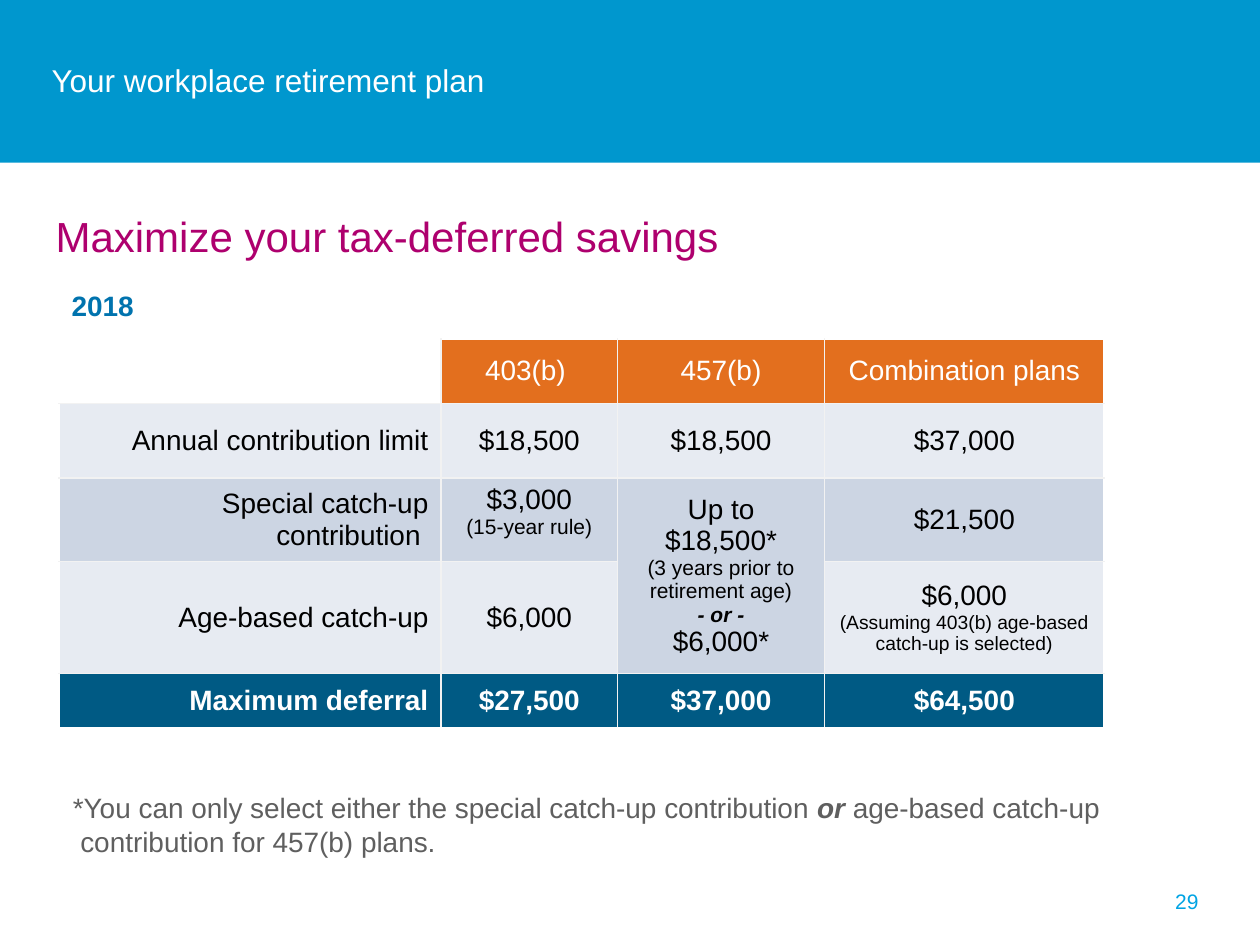
from pptx import Presentation
from pptx import util as u
from pptx.dml.color import RGBColor
from pptx.enum import shapes, text
from pptx.oxml import parse_xml
from pptx.oxml.ns import nsdecls

BLUE, MAGENTA = RGBColor(0x00, 0x97, 0xCE), RGBColor(0xAE, 0x00, 0x6E)
GREY, PAGE_BLUE = RGBColor(0x5F, 0x5F, 0x5F), RGBColor(0x00, 0xA4, 0xE4)
YEAR_BLUE, NAVY = RGBColor(0x00, 0x73, 0xAE), RGBColor(0x00, 0x5A, 0x84)
ORANGE = RGBColor(0xE3, 0x6F, 0x1E)
PALE, MID = RGBColor(0xE7, 0xEB, 0xF2), RGBColor(0xCC, 0xD5, 0xE3)
WHITE, BLACK = RGBColor(0xFF, 0xFF, 0xFF), RGBColor(0, 0, 0)
BORDER = "F2F2F2"
LEFT, CENTER, RIGHT = text.PP_ALIGN.LEFT, text.PP_ALIGN.CENTER, text.PP_ALIGN.RIGHT
TOP, MIDDLE = text.MSO_ANCHOR.TOP, text.MSO_ANCHOR.MIDDLE

# Content: a cell is a list of lines, a line a list of (text, size, style)
TITLE = [[("Your workplace retirement plan", 18, "")]]
HEADING = [[("Maximize your tax-deferred savings", 24, "")]]
FOOTNOTE = [[
    ("*You can only select either the special catch-up contribution ", 16, ""),
    ("or", 16, "bi"),
    (" age-based catch-up contribution for 457(b) plans.", 16, ""),
]]
PAGE = [[("29", 12, "")]]

SPECIAL_403 = [[("$3,000", 16, "")], [("(15-year rule)", 12, "")]]
CATCH_UP_457 = [
    [("Up to $18,500*", 16, "")],
    [("(3 years prior to retirement age)", 12, "")],
    [("- or -", 12, "bi")],
    [("$6,000*", 16, "")],
]
AGE_COMBINED = [
    [("$6,000", 16, "")],
    [("(Assuming 403(b) age-based catch-up is selected)", 11, "")],
]
# Rows: height, fill, text colour, style, cells
ROWS = [
    (1.09, None, YEAR_BLUE, "b", ["2018", "", "", ""]),
    (1.3, ORANGE, WHITE, "", ["", "403(b) ", "457(b)", "Combination plans"]),
    (1.51, PALE, BLACK, "",
     ["Annual contribution limit", "$18,500", "$18,500", "$37,000"]),
    (1.68, MID, BLACK, "",
     ["Special catch-up contribution ", SPECIAL_403, CATCH_UP_457, "$21,500"]),
    (2.26, PALE, BLACK, "", ["Age-based catch-up", "$6,000", "", AGE_COMBINED]),
    (1.09, NAVY, WHITE, "b", ["Maximum deferral", "$27,500", "$37,000", "$64,500"]),
]
COL_WIDTHS = [7.7, 3.56, 4.17, 5.64]
MERGES = [((0, 0), (0, 3)), ((3, 2), (4, 2))]


def write(tf, lines, color, align=LEFT):
    p = tf.paragraphs[0]
    p.alignment = align
    for i, line in enumerate(lines):
        if i:
            p.add_line_break()
        for words, size, style in line:
            r = p.add_run()
            r.text = words
            r.font.name, r.font.size = "Arial", u.Pt(size)
            r.font.bold, r.font.italic = "b" in style, "i" in style
            r.font.color.rgb = color
    return p


def add_text(s, box, lines, color, align=LEFT, anchor=TOP, inset=0.25):
    tf = s.shapes.add_textbox(*(u.Cm(v) for v in box)).text_frame
    tf.word_wrap = True
    tf.vertical_anchor = anchor
    tf.margin_left = u.Cm(inset)
    return write(tf, lines, color, align)


def set_borders(cell, sides):
    for side in sides:
        cell._tc.get_or_add_tcPr().append(parse_xml(
            f'<a:ln{side} {nsdecls("a")} w="12700"><a:solidFill>'
            f'<a:srgbClr val="{BORDER}"/></a:solidFill></a:ln{side}>'))


def add_limits_table(s):
    frame = s.shapes.add_table(
        len(ROWS), len(COL_WIDTHS), u.Cm(1.19), u.Cm(5.74),
        u.Cm(sum(COL_WIDTHS)), u.Cm(sum(row[0] for row in ROWS)))
    table = frame.table
    table.first_row = table.horz_banding = False
    for col, width in zip(table.columns, COL_WIDTHS):
        col.width = u.Cm(width)
    for start, end in MERGES:
        table.cell(*start).merge(table.cell(*end))

    last_row, last_col = len(ROWS) - 1, len(COL_WIDTHS) - 1
    for i, (height, fill, color, style, cells) in enumerate(ROWS):
        table.rows[i].height = u.Cm(height)
        for j, content in enumerate(cells):
            cell = table.cell(i, j)
            # Inner grid lines only, none around the year row
            inner = {"L": j > 0, "R": j < last_col, "T": i > 1, "B": i < last_row}
            if i:
                set_borders(cell, [side for side, on in inner.items() if on])
            if fill is None or (i == 1 and j == 0):
                cell.fill.background()
            else:
                cell.fill.solid()
                cell.fill.fore_color.rgb = fill
            cell.vertical_anchor = TOP if i == 0 or content is SPECIAL_403 else MIDDLE
            if content:
                lines = [[(content, 16, style)]] if isinstance(content, str) else content
                align = LEFT if i == 0 else CENTER if j else RIGHT
                write(cell.text_frame, lines, color, align)


def main():
    prs = Presentation()
    prs.slide_width, prs.slide_height = u.Cm(25.4), u.Cm(19.05)
    s = prs.slides.add_slide(prs.slide_layouts[6])

    # Title band
    band = s.shapes.add_shape(
        shapes.MSO_SHAPE.RECTANGLE, 0, 0, prs.slide_width, u.Cm(3.28))
    band.shadow.inherit = False
    band.fill.solid()
    band.fill.fore_color.rgb = BLUE
    band.line.fill.background()
    add_text(s, (1.04, 0.99, 23.39, 1.24), TITLE, WHITE, anchor=MIDDLE, inset=0)

    # Heading and table
    add_text(s, (1.12, 4.11, 23.27, 12.67), HEADING, MAGENTA, inset=0)
    add_limits_table(s)

    # Footnote with hanging indent, page number
    note = add_text(s, (1.22, 15.82, 21.64, 1.63), FOOTNOTE, GREY)
    pPr = note._p.get_or_add_pPr()
    pPr.set("marL", str(u.Cm(0.15)))
    pPr.set("indent", str(u.Cm(-0.15)))
    add_text(s, (18.49, 17.65, 5.92, 1.02), PAGE, PAGE_BLUE, RIGHT, MIDDLE)

    prs.save("out.pptx")


if __name__ == "__main__":
    main()
